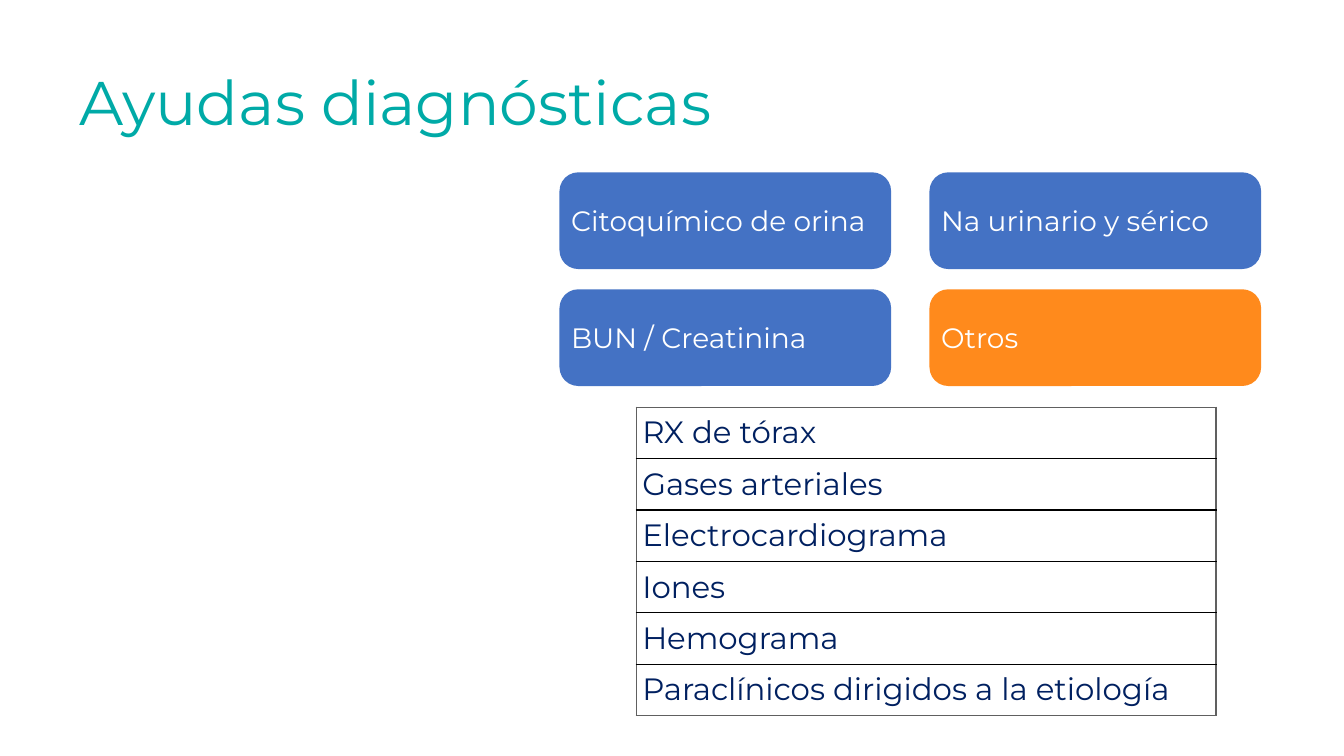
from dataclasses import dataclass

from lxml import etree
from pptx import Presentation
from pptx.dml.color import RGBColor
from pptx.enum.shapes import MSO_SHAPE
from pptx.enum.text import MSO_ANCHOR, PP_ALIGN
from pptx.oxml.ns import qn
from pptx.slide import Slide
from pptx.table import _Cell
from pptx.text.text import TextFrame
from pptx.util import Inches, Pt

ROUND = MSO_SHAPE.ROUNDED_RECTANGLE
MIDDLE = MSO_ANCHOR.MIDDLE
LEFT, CENTER = PP_ALIGN.LEFT, PP_ALIGN.CENTER
WIDE, HIGH = Inches(13.33), Inches(7.5)
PAD = Inches(0.06)


@dataclass(frozen=True)
class Theme:
    font: str = "Montserrat"
    teal: str = "00AAA7"
    blue: str = "4472C4"
    amber: str = "FF8A1C"
    white: str = "FFFFFF"
    navy: str = "002060"
    frame: str = "606060"
    rule: str = "000000"
    title: int = 44
    card: int = 20
    row: int = 22


@dataclass(frozen=True)
class Box:
    left: float
    top: float
    width: float
    height: float

    def place(self) -> tuple[int, int, int, int]:
        return (round(WIDE * self.left / 100), round(HIGH * self.top / 100),
                round(WIDE * self.width / 100), round(HIGH * self.height / 100))


@dataclass(frozen=True)
class Card:
    text: str
    col: int
    row: int
    fill: str


THEME = Theme()
TITLE = Box(4.88, 4.27, 49.14, 19.33)
FIRST = Box(41.63, 22.8, 24.68, 12.8)
STEP_X, STEP_Y = 27.53, 15.47
TABLE = Box(47.34, 53.87, 43.14, 40.8)

CARDS = [
    Card("Citoquímico de orina", 0, 0, THEME.blue),
    Card("BUN / Creatinina", 0, 1, THEME.blue),
    Card("Na urinario y sérico", 1, 0, THEME.blue),
    Card("Otros", 1, 1, THEME.amber),
]
TESTS = [
    "RX de tórax",
    "Gases arteriales",
    "Electrocardiograma",
    "Iones",
    "Hemograma",
    "Paraclínicos dirigidos a la etiología",
]


def write(frame: TextFrame, text: str, *, size: int, color: str,
          align: PP_ALIGN = LEFT, space: float = 1.0) -> None:
    para = frame.paragraphs[0]
    para.alignment = align
    para.line_spacing = space
    run = para.add_run()
    run.text = text
    run.font.name = THEME.font
    run.font.size = Pt(size)
    run.font.bold = False
    run.font.color.rgb = RGBColor.from_string(color)


def add_title(slide: Slide, text: str) -> None:
    frame = slide.shapes.add_textbox(*TITLE.place()).text_frame
    frame.word_wrap = True
    frame.vertical_anchor = MIDDLE
    write(frame, text, size=THEME.title, color=THEME.teal, align=CENTER, space=0.9)


def add_card(slide: Slide, card: Card) -> None:
    box = Box(FIRST.left + card.col * STEP_X, FIRST.top + card.row * STEP_Y,
              FIRST.width, FIRST.height)
    shape = slide.shapes.add_shape(ROUND, *box.place())
    shape.adjustments[0] = 0.195
    shape.shadow.inherit = False
    shape.fill.solid()
    shape.fill.fore_color.rgb = RGBColor.from_string(card.fill)
    shape.line.fill.background()
    frame = shape.text_frame
    frame.word_wrap = True
    frame.vertical_anchor = MIDDLE
    frame.margin_left = frame.margin_right = PAD
    frame.margin_top = frame.margin_bottom = PAD
    write(frame, card.text, size=THEME.card, color=THEME.white)


def add_edge(cell: _Cell, side: str, color: str) -> None:
    props = cell._tc.get_or_add_tcPr()
    line = etree.SubElement(props, qn(f"a:ln{side}"), w=str(Pt(1)))
    fill = etree.SubElement(line, qn("a:solidFill"))
    etree.SubElement(fill, qn("a:srgbClr"), val=color)


def add_list(slide: Slide, items: list[str]) -> None:
    table = slide.shapes.add_table(len(items), 1, *TABLE.place()).table
    table.first_row = False
    table.horz_banding = False
    last = len(items) - 1
    for index, text in enumerate(items):
        cell = table.cell(index, 0)
        add_edge(cell, "L", THEME.frame)
        add_edge(cell, "R", THEME.frame)
        add_edge(cell, "T", THEME.frame if index == 0 else THEME.rule)
        add_edge(cell, "B", THEME.frame if index == last else THEME.rule)
        cell.fill.background()
        cell.vertical_anchor = MIDDLE
        cell.margin_left = cell.margin_right = PAD
        cell.margin_top = cell.margin_bottom = PAD
        write(cell.text_frame, text, size=THEME.row, color=THEME.navy)


def main() -> None:
    deck = Presentation()
    deck.slide_width, deck.slide_height = WIDE, HIGH
    slide = deck.slides.add_slide(deck.slide_layouts[6])
    add_title(slide, "Ayudas diagnósticas")
    for card in CARDS:
        add_card(slide, card)
    add_list(slide, TESTS)
    deck.save("out.pptx")


if __name__ == "__main__":
    main()
